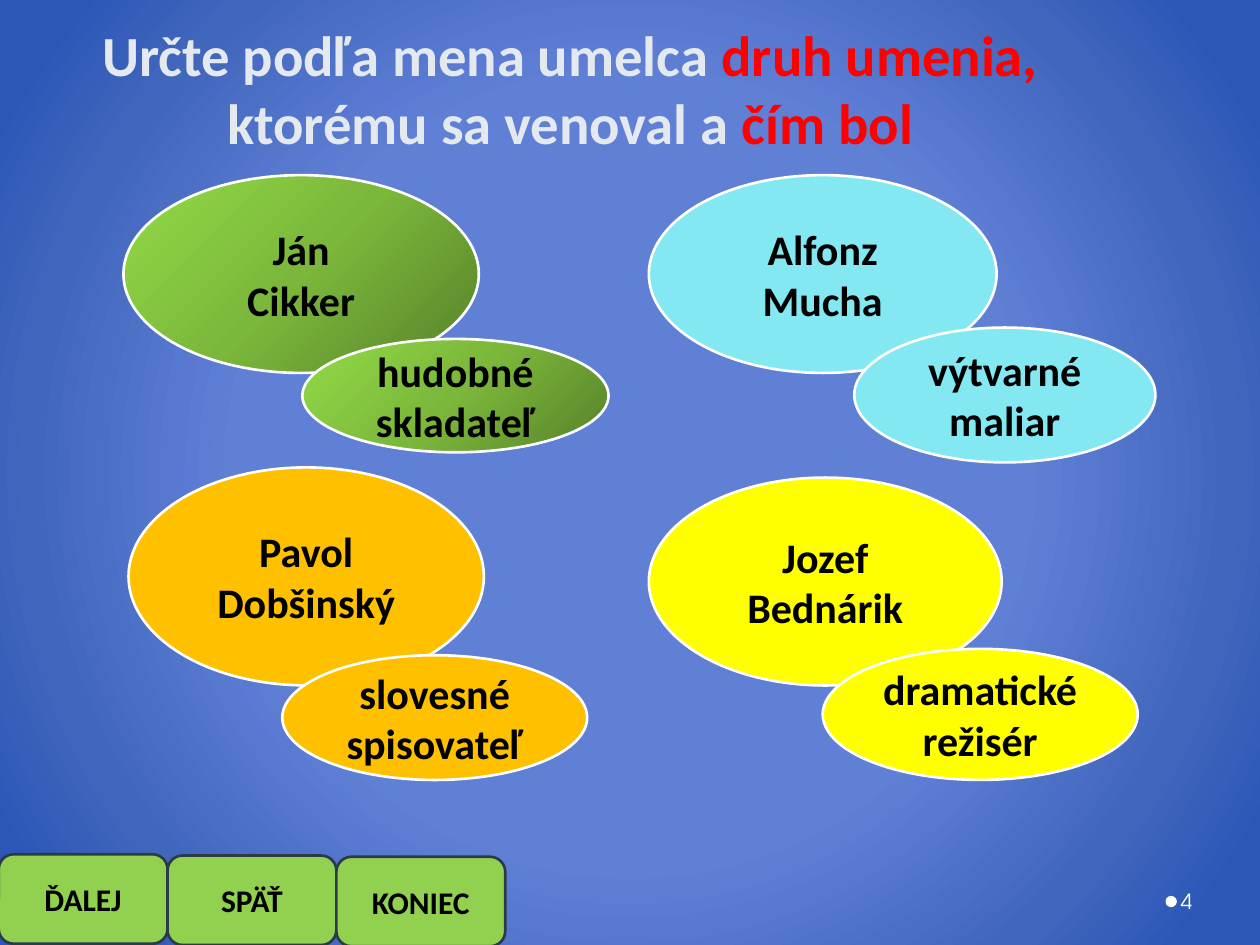
from lxml import etree
from pptx import Presentation
from pptx import util as u
from pptx.dml.color import RGBColor
from pptx.enum import shapes, text
from pptx.oxml import ns

COLS, ROWS = 100, 75
MIDDLE, BOTTOM = text.MSO_ANCHOR.MIDDLE, text.MSO_ANCHOR.BOTTOM
CENTER, LEFT = text.PP_ALIGN.CENTER, text.PP_ALIGN.LEFT
OVAL = shapes.MSO_SHAPE.OVAL
ROUNDED = shapes.MSO_SHAPE.ROUNDED_RECTANGLE

BLACK, WHITE, RED, PALE = "000000", "FFFFFF", "FF0000", "E4E9EF"
BACKDROP = [(50, "6080D6"), (76, "4167BD"), (92, "2D57B7")]
GREEN = [(0, "57812A"), (50, "7BB73B"), (100, "92DA46")]
CYAN, YELLOW, ORANGE = "84E8F2", "FFFF00", "FFC000"
BUTTON, BUTTON_LINE = "92D050", "2B3949"


def rgb(value):
    return RGBColor.from_string(value)


class Deck:
    font = "Calibri"

    def __init__(self, width, height):
        self.prs = Presentation()
        self.prs.slide_width = u.Inches(width)
        self.prs.slide_height = u.Inches(height)
        self.s = self.prs.slides.add_slide(self.prs.slide_layouts[6])

    def box(self, at):
        x, y, w, h = at
        dx, dy = self.prs.slide_width / COLS, self.prs.slide_height / ROWS
        return [round(v) for v in (x * dx, y * dy, w * dx, h * dy)]

    def radial(self, fill, stops, center):
        fill.gradient()
        grad = fill._fill._gradFill
        for child in list(grad):
            grad.remove(child)

        def add(parent, tag, **attrs):
            return etree.SubElement(parent, ns.qn(tag), attrs)

        gs_list = add(grad, "a:gsLst")
        for pos, color in stops:
            gs = add(gs_list, "a:gs", pos=str(pos * 1000))
            add(gs, "a:srgbClr", val=color)
        near, far = str(center * 1000), str((100 - center) * 1000)
        way = add(grad, "a:path", path="circle")
        add(way, "a:fillToRect", l=near, t=near, r=far, b=far)

    def backdrop(self, stops):
        self.radial(self.s.background.fill, stops, 50)

    def put_text(self, sp, paragraphs, size, bold=True, align=CENTER,
                 anchor=MIDDLE, font=None):
        tf = sp.text_frame
        tf.word_wrap = True
        tf.vertical_anchor = anchor
        for i, parts in enumerate(paragraphs):
            p = tf.add_paragraph() if i else tf.paragraphs[0]
            p.alignment = align
            for words, color in parts:
                r = p.add_run()
                r.text = words
                r.font.name = font or self.font
                r.font.size = u.Pt(size)
                r.font.bold = bold
                r.font.color.rgb = rgb(color)

    def label(self, at, parts, size, **style):
        sp = self.s.shapes.add_textbox(*self.box(at))
        self.put_text(sp, [parts], size, **style)
        return sp

    def shape(self, kind, at, fill, line=None, lines=(), size=24):
        sp = self.s.shapes.add_shape(kind, *self.box(at))
        sp.shadow.inherit = False
        if isinstance(fill, str):
            sp.fill.solid()
            sp.fill.fore_color.rgb = rgb(fill)
        else:
            self.radial(sp.fill, fill, 100)
        if line:
            sp.line.color.rgb = rgb(line)
            sp.line.width = u.Pt(1.5)
        else:
            sp.line.fill.background()
        if lines:
            self.put_text(sp, [[(words, BLACK)] for words in lines], size)


def main():
    deck = Deck(10, 7.5)
    deck.backdrop(BACKDROP)

    deck.shape(OVAL, (92.5, 71.1, 0.9, 0.9), WHITE)
    for i, name in enumerate(["ĎALEJ", "SPÄŤ", "KONIEC"]):
        deck.shape(ROUNDED, (-0.1 + 13.4 * i, 67.8 + 0.1 * i, 13.4, 7.1),
                   BUTTON, BUTTON_LINE, [name], 18)

    deck.label((1.3, 0.3, 87.9, 12.6),
               [("Určte podľa mena umelca ", PALE), ("druh umenia, ", RED),
                ("ktorému sa venoval a ", PALE), ("čím bol", RED)],
               32.4, anchor=BOTTOM)

    artists = [
        ((10.2, 37.1, 28.2, 17.3), ORANGE, ["Pavol Dobšinský"]),
        ((9.8, 13.9, 28.2, 15.7), GREEN, ["Ján", "Cikker"]),
        ((51.5, 37.9, 28, 16.5), YELLOW, ["Jozef Bednárik"]),
        ((51.5, 13.9, 27.6, 15.7), CYAN, ["Alfonz Mucha"]),
    ]
    answers = [
        ((65.3, 51.5, 25, 10.4), YELLOW, ["dramatické", "režisér"]),
        ((24, 26.9, 24.3, 9), GREEN, ["hudobné skladateľ"]),
        ((67.8, 26, 23.9, 10.7), CYAN, ["výtvarné", "maliar"]),
        ((22.4, 52, 24.2, 9.9), ORANGE, ["slovesné", "spisovateľ"]),
    ]
    for at, fill, lines in artists + answers:
        deck.shape(OVAL, at, fill, WHITE, lines)

    number = deck.label((93.4, 69.5, 6.1, 4), [("4", WHITE)], 12, bold=False,
                        align=LEFT, anchor=MIDDLE, font="TeX Gyre Adventor")
    number.text_frame.margin_left = u.Inches(0.03)
    number.text_frame.margin_right = u.Inches(0.05)

    deck.prs.save("out.pptx")


if __name__ == "__main__":
    main()
